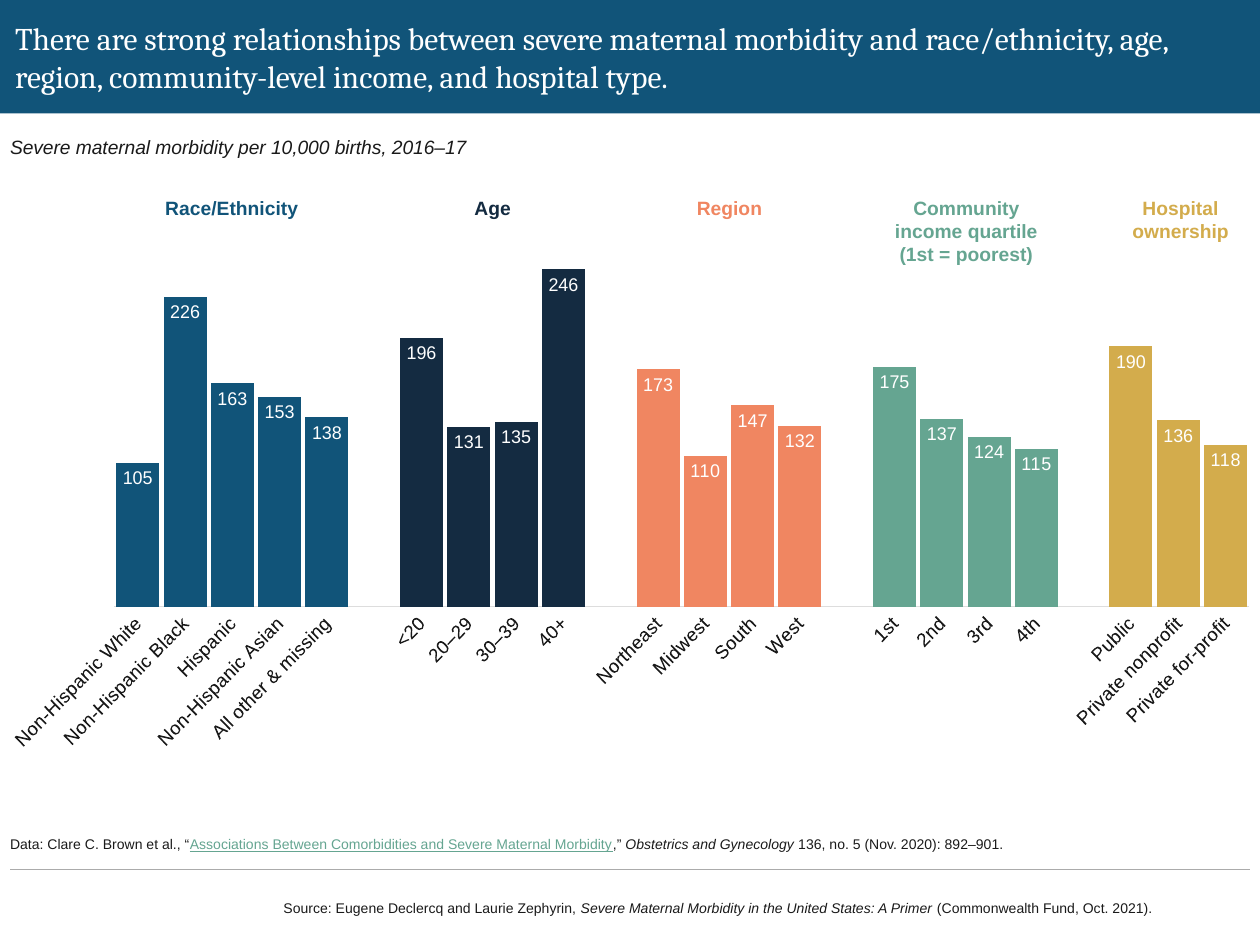
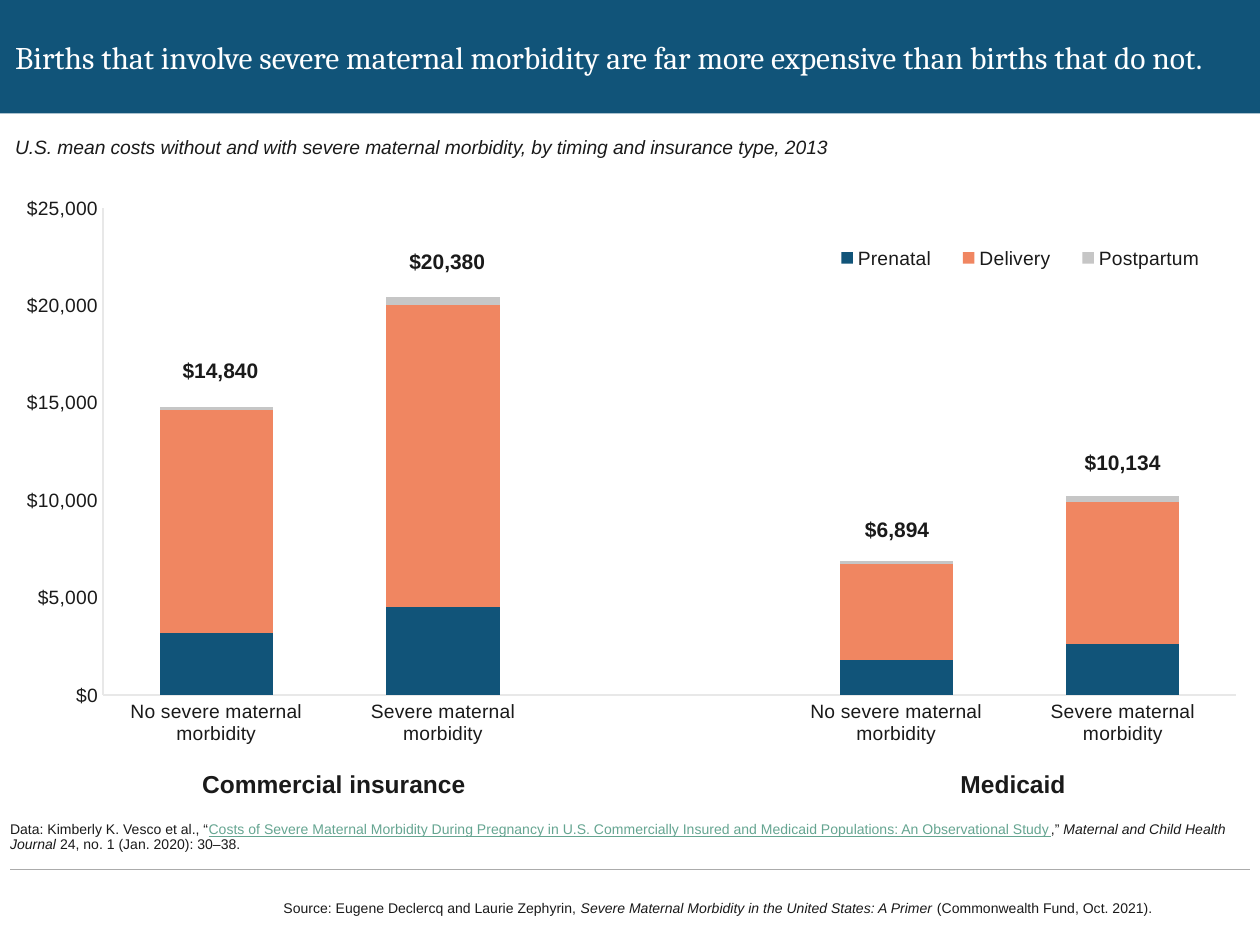
import pptx
import pptx.chart.data
import pptx.dml.color
import pptx.enum.chart
import pptx.enum.shapes
import pptx.enum.text
import pptx.oxml
import pptx.oxml.ns
import pptx.util
from lxml import etree

Inches = pptx.util.Inches
Pt = pptx.util.Pt
KIND = pptx.enum.chart.XL_CHART_TYPE
ALIGN = pptx.enum.text.PP_ALIGN
ANCHOR = pptx.enum.text.MSO_ANCHOR

BLUE, NAVY, CORAL = "115479", "142B41", "F08661"
GREEN, GOLD, INK = "65A591", "D3AC4C", "1A1A1A"
WHITE, GREY, RULE = "FFFFFF", "C6C6C6", "ABABAB"

EDGE, WIDE = 0.08, 9.84
HEAD = dict(name="Cambria", size=18, color=WHITE)
SUB = dict(name="Arial", size=11, color=INK, italic=True)
NOTE = dict(name="Arial", size=8, color=INK)
LABEL = dict(name="Arial", size=11, color=INK)
GROUP = dict(name="Arial", size=11, bold=True)
TOTAL = dict(name="Arial", size=12, color=INK, bold=True)
PAYER = dict(name="Arial", size=14, color=INK, bold=True)
VALUE = dict(name="Arial", size=10.5, color=WHITE)
LINK = dict(color=GREEN, underline=True)
BOOK = dict(italic=True)

SOURCE = [
    ("Source: Eugene Declercq and Laurie Zephyrin, ", {}),
    ("Severe Maternal Morbidity in the United States: A Primer ", BOOK),
    ("(Commonwealth Fund, Oct. 2021).", {}),
]

RATES = dict(
    title="There are strong relationships between severe maternal morbidity and "
          "race/ethnicity, age, region, community-level income, and hospital type.",
    sub="Severe maternal morbidity per 10,000 births, 2016–17",
    left=EDGE,
    data=[
        ("Data: Clare C. Brown et al., “", {}),
        ("Associations Between Comorbidities and Severe Maternal Morbidity", LINK),
        (",” ", {}),
        ("Obstetrics and Gynecology", BOOK),
        (" 136, no. 5 (Nov. 2020): 892–901.", {}),
    ],
)
GROUPS = [
    ("Race/Ethnicity", 1.84, BLUE, [
        ("Non-Hispanic White", 105), ("Non-Hispanic Black", 226), ("Hispanic", 163),
        ("Non-Hispanic Asian", 153), ("All other & missing", 138)]),
    ("Age", 3.91, NAVY, [
        ("<20", 196), ("20–29", 131), ("30–39", 135), ("40+", 246)]),
    ("Region", 5.79, CORAL, [
        ("Northeast", 173), ("Midwest", 110), ("South", 147), ("West", 132)]),
    ("Community\nincome quartile\n(1st = poorest)", 7.67, GREEN, [
        ("1st", 175), ("2nd", 137), ("3rd", 124), ("4th", 115)]),
    ("Hospital\nownership", 9.37, GOLD, [
        ("Public", 190), ("Private nonprofit", 136), ("Private for-profit", 118)]),
]

COSTS = dict(
    title="Births that involve severe maternal morbidity are far more expensive "
          "than births that do not.",
    sub="U.S. mean costs without and with severe maternal morbidity, by timing "
        "and insurance type, 2013",
    left=0.12,
    data=[
        ("Data: Kimberly K. Vesco et al., “", {}),
        ("Costs of Severe Maternal Morbidity During Pregnancy in U.S. Commercially "
         "Insured and Medicaid Populations: An Observational Study", LINK),
        (",” ", {}),
        ("Maternal and Child Health Journal", BOOK),
        (" 24, no. 1 (Jan. 2020): 30–38.", {}),
    ],
)
BIRTHS = ["No severe maternal\nmorbidity", "Severe maternal\nmorbidity"]
PHASES = [
    ("Prenatal", BLUE, [3200, 4500, None, 1800, 2600]),
    ("Delivery", CORAL, [11400, 15500, None, 4900, 7300]),
    ("Postpartum", GREY, [200, 400, None, 200, 300]),
]
TOTALS = [("$14,840", 1.75, 2.79), ("$20,380", 3.55, 1.92),
          ("$6,894", 7.12, 4.05), ("$10,134", 8.91, 3.52)]
PAYERS = [("Commercial insurance", 2.65), ("Medicaid", 8.04)]


def shade(code):
    return pptx.dml.color.RGBColor.from_string(code)


def paint(fill, code):
    fill.solid()
    fill.fore_color.rgb = shade(code)


def style(font, form):
    for key, value in form.items():
        if key == "color":
            font.color.rgb = shade(value)
        else:
            setattr(font, key, Pt(value) if key == "size" else value)


def write(slide, spot, lines, form, **more):
    box = slide.shapes.add_textbox(*map(Inches, spot))
    frame = box.text_frame
    look = dict(word_wrap=True, margin_left=0, margin_right=0,
                margin_top=0, margin_bottom=0)
    for key, value in {**look, **more}.items():
        setattr(frame, key, value)
    for num, line in enumerate(lines):
        para = frame.add_paragraph() if num else frame.paragraphs[0]
        for text, extra in line:
            run = para.add_run()
            run.text = text
            style(run.font, {**form, **extra})
    return frame


def center(slide, text, mid, top, form, wide=1.24):
    lines = [[(part, {})] for part in text.split("\n")]
    spot = (mid - wide / 2, top, wide, 0.1 + 0.18 * len(lines))
    frame = write(slide, spot, lines, form, word_wrap=False,
                  margin_top=Inches(0.05), margin_bottom=Inches(0.05))
    for para in frame.paragraphs:
        para.alignment = ALIGN.CENTER


def start(deck, page):
    slide = deck.slides.add_slide(deck.slide_layouts[6])
    band = slide.shapes.add_shape(pptx.enum.shapes.MSO_SHAPE.RECTANGLE,
                                  0, 0, Inches(10), Inches(0.9))
    band.shadow.inherit = False
    paint(band.fill, BLUE)
    band.line.fill.background()
    rule = slide.shapes.add_connector(
        pptx.enum.shapes.MSO_CONNECTOR.STRAIGHT,
        Inches(EDGE + WIDE), Inches(6.9), Inches(EDGE), Inches(6.9))
    rule.line.color.rgb = shade(RULE)
    rule.line.width = Pt(0.75)
    etree.SubElement(rule._element.spPr, pptx.oxml.ns.qn("a:effectLst"))
    write(slide, (2.25, 7.14, 7.67, 0.13), [SOURCE], NOTE,
          vertical_anchor=ANCHOR.MIDDLE)
    write(slide, (0.12, 0, WIDE, 0.9), [[(page["title"], {})]], HEAD,
          vertical_anchor=ANCHOR.MIDDLE)
    sub = write(slide, (page["left"], 1.07, 9.7, 0.27), [[(page["sub"], {})]], SUB)
    sub.paragraphs[0].runs[0].font._element.set("spc", "-5")
    data = write(slide, (EDGE, 6.23, WIDE, 0.54), [page["data"]], NOTE,
                 vertical_anchor=ANCHOR.BOTTOM)
    data.paragraphs[0].line_spacing = 0.9
    data.paragraphs[0].space_after = Pt(6)
    return slide


def place(node, index, inner, **sides):
    for old in node.findall(pptx.oxml.ns.qn("c:layout")):
        node.remove(old)
    modes = '<c:layoutTarget val="inner"/>' if inner else ""
    modes += '<c:xMode val="edge"/><c:yMode val="edge"/>'
    sizes = "".join(f'<c:{key} val="{value}"/>' for key, value in sides.items())
    node.insert(index, pptx.oxml.parse_xml(
        f'<c:layout {pptx.oxml.ns.nsdecls("c")}><c:manualLayout>'
        f'{modes}{sizes}</c:manualLayout></c:layout>'))


def graph(slide, kind, top, tall, names, series, peak, line, gap, area):
    data = pptx.chart.data.CategoryChartData()
    data.categories = names
    for name, code, values in series:
        data.add_series(name, values)
    chart = slide.shapes.add_chart(kind, Inches(EDGE), Inches(top), Inches(WIDE),
                                   Inches(tall), data).chart
    chart.has_title = False
    chart.has_legend = False
    style(chart.font, LABEL)
    plot = chart.plots[0]
    plot.vary_by_categories = False
    plot.gap_width = gap
    for item, (name, code, values) in zip(plot.series, series):
        paint(item.format.fill, code)
    for axis in (chart.category_axis, chart.value_axis):
        axis.has_major_gridlines = False
        axis.major_tick_mark = pptx.enum.chart.XL_TICK_MARK.NONE
        axis.minor_tick_mark = pptx.enum.chart.XL_TICK_MARK.NONE
        axis.format.line.color.rgb = shade(line)
        axis.format.line.width = Pt(0.75)
        style(axis.tick_labels.font, LABEL)
    chart.value_axis.minimum_scale = 0
    chart.value_axis.maximum_scale = peak
    place(chart._chartSpace.chart.plotArea, 0, True, **area)
    return chart


def rates(deck):
    slide = start(deck, RATES)
    bars = []
    for title, mid, code, rows in GROUPS:
        if bars:
            bars.append(("", None, None))
        bars += [(name, value, code) for name, value in rows]
    names, values, codes = zip(*bars)
    chart = graph(slide, KIND.COLUMN_CLUSTERED, 1.38, 4.8, names,
                  [("Series 1", BLUE, values)], 300, "DDDDDD", 10,
                  dict(x=0.061, y=0.035, w=0.939, h=0.681))
    chart.value_axis.visible = False
    axis = chart.category_axis._element
    axis.find(".//" + pptx.oxml.ns.qn("a:bodyPr")).set("rot", "-2700000")
    plot = chart.plots[0]
    for num, code in enumerate(codes):
        if code and code != BLUE:
            paint(plot.series[0].points[num].format.fill, code)
    plot.has_data_labels = True
    form = dict(show_value=True, number_format="0", number_format_is_linked=False,
                position=pptx.enum.chart.XL_LABEL_POSITION.INSIDE_END)
    for key, value in form.items():
        setattr(plot.data_labels, key, value)
    style(plot.data_labels.font, VALUE)
    for title, mid, code, rows in GROUPS:
        center(slide, title, mid, 1.51, {**GROUP, "color": code})


def costs(deck):
    slide = start(deck, COSTS)
    chart = graph(slide, KIND.COLUMN_STACKED, 1.51, 4.67, BIRTHS + [""] + BIRTHS,
                  PHASES, 25000, "E8E8E8", 100,
                  dict(x=0.075, y=0.03, w=0.914, h=0.828))
    chart.plots[0].overlap = 100
    chart.value_axis.major_unit = 5000
    ticks = chart.value_axis.tick_labels
    ticks.number_format = '"$"#,##0'
    ticks.number_format_is_linked = False
    chart.has_legend = True
    chart.legend.position = pptx.enum.chart.XL_LEGEND_POSITION.BOTTOM
    chart.legend.include_in_layout = False
    style(chart.legend.font, LABEL)
    place(chart.legend._element, 1, False, x=0.65, y=0.09, w=0.33, h=0.05)
    for text, mid, top in TOTALS:
        center(slide, text, mid, top, TOTAL)
    for text, mid in PAYERS:
        center(slide, text, mid, 6.05, PAYER, 2.7)


def main():
    deck = pptx.Presentation()
    deck.slide_width, deck.slide_height = Inches(10), Inches(7.5)
    rates(deck)
    costs(deck)
    deck.save("out.pptx")


if __name__ == "__main__":
    main()
